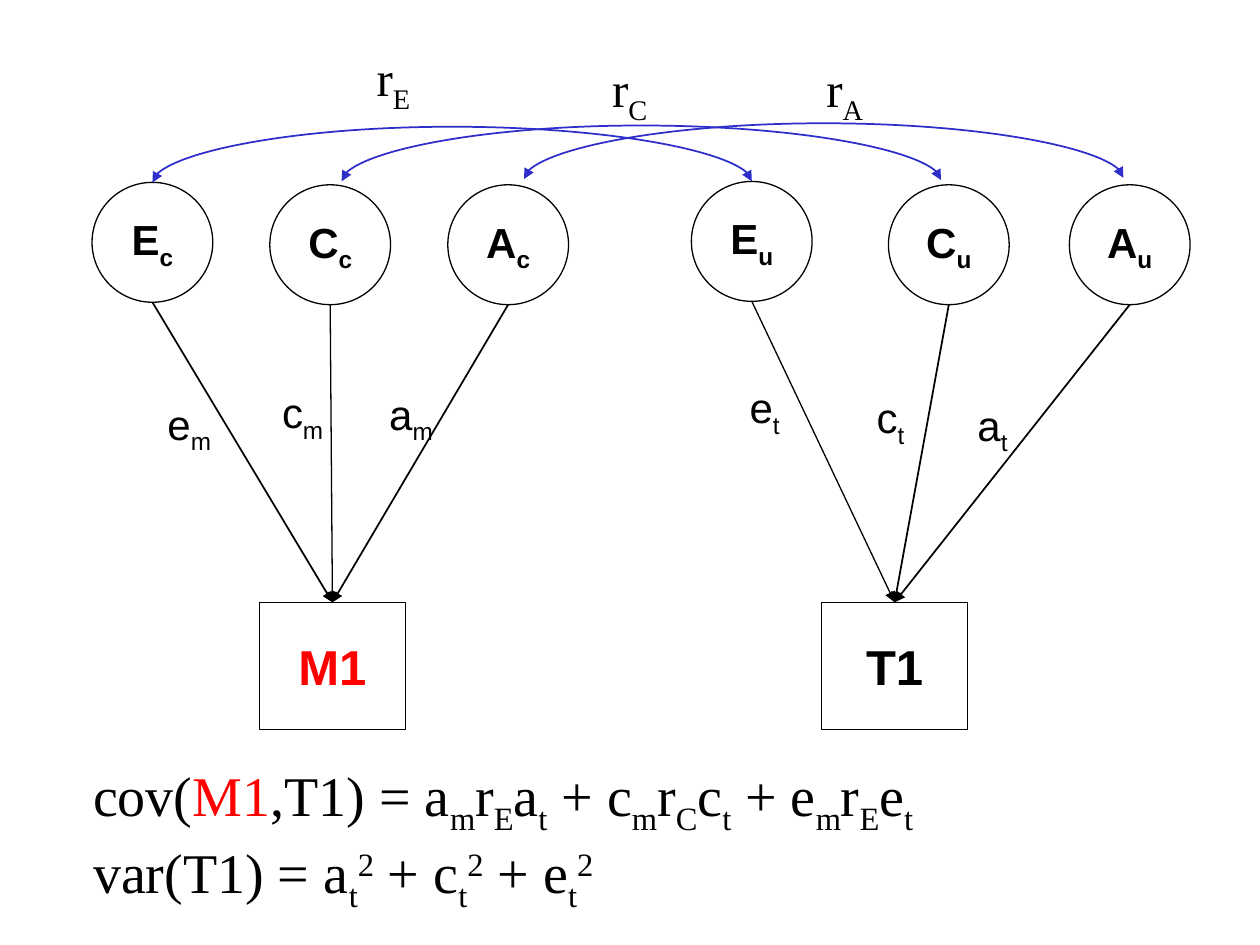
"""Build a path diagram of two traits with correlated E, C and A factors."""
from typing import NamedTuple

from lxml.etree import SubElement
from pptx import Presentation
from pptx.dml.color import RGBColor
from pptx.enum.shapes import MSO_CONNECTOR, MSO_SHAPE
from pptx.enum.text import MSO_ANCHOR, PP_ALIGN
from pptx.oxml.ns import qn
from pptx.util import Pt

BLACK = RGBColor(0, 0, 0)
WHITE = RGBColor(255, 255, 255)
RED = RGBColor(255, 0, 0)
BLUE = RGBColor(0x2E, 0x2E, 0xCB)
SANS, SERIF = "Arial", "Times New Roman"
BASE = {"_": "-25000", "^": "30000"}
NODE_W, NODE_H = 69, 68.5
BOX_W, BOX_H, BOX_TOP = 83.5, 72.7, 344.2
ARC_SPAN, ARC_RISE, ARC_DROP = 342.5, 32.4, 0.72


class Trait(NamedTuple):
    text: str
    mid: float


class Node(NamedTuple):
    text: str
    mid: float
    top: float
    trait: Trait
    weight: float


class Label(NamedTuple):
    text: str
    left: float
    top: float
    width: float
    height: float
    size: float
    font: str


class Arc(NamedTuple):
    left: float
    mid: float


M1, T1 = Trait("!M1", 190), Trait("T1", 511.2)
TRAITS = [M1, T1]
NODES = [
    Node("E|_c", 87.1, 104.2, M1, 1),
    Node("C|_c", 188.7, 105.6, M1, 0.75),
    Node("A|_c", 290.4, 105.6, M1, 1),
    Node("E|_u", 429.6, 103.7, T1, 0.75),
    Node("C|_u", 542.2, 105.6, T1, 1),
    Node("A|_u", 645.6, 105.6, T1, 1),
]
ARCS = [Arc(87.1, 104), Arc(195.2, 103.3), Arc(299.4, 102)]
LABELS = [
    Label("e|_m", 88.6, 223.9, 41.8, 36, 24, SANS),
    Label("c|_m", 154.1, 217.4, 40.3, 36, 24, SANS),
    Label("a|_m", 215.3, 218.2, 41.8, 36, 24, SANS),
    Label("e|_t", 421.2, 214.6, 39.6, 36, 24, SANS),
    Label("c|_t", 493.9, 220.3, 31, 36, 24, SANS),
    Label("a|_t", 551.5, 224.6, 50.4, 36, 24, SANS),
    Label("r|_E", 208.1, 23.8, 35.3, 41, 28, SERIF),
    Label("r|_C", 342.7, 30.2, 52.6, 41, 28, SERIF),
    Label("r|_A", 465.1, 30.2, 37.4, 41, 28, SERIF),
    Label("cov(|!M1|,T1) = a|_m|r|_E|a|_t| + c|_m|r|_C|c|_t| + e|_m|r|_E|e|_t\n"
          "var(T1) = a|_t|^2| + c|_t|^2| + e|_t|^2",
          46.1, 431.3, 501.8, 85, 32, SERIF),
]


def write(frame, text: str, size: float, font: str, bold=False, align=PP_ALIGN.LEFT) -> None:
    """Fill a frame; a part led by _ is low, by ^ high, by ! red."""
    frame.word_wrap = False
    for i, line in enumerate(text.split("\n")):
        para = frame.add_paragraph() if i else frame.paragraphs[0]
        para.alignment = align
        para.font.size, para.font.name, para.font.bold = Pt(size), font, bold
        for part in line.split("|"):
            run = para.add_run()
            run.text = part.lstrip("_^!")
            run.font.color.rgb = RED if part[0] == "!" else BLACK
            if part[0] in BASE:
                run.font._element.set("baseline", BASE[part[0]])


def draw_shape(slide, kind, mid: float, top: float, width: float, height: float,
               text: str, size: float) -> None:
    """Draw an outlined shape around its middle with a bold name."""
    shape = slide.shapes.add_shape(kind, Pt(mid - width / 2), Pt(top), Pt(width), Pt(height))
    shape.shadow.inherit = False
    shape.fill.solid()
    shape.fill.fore_color.rgb = WHITE
    shape.line.color.rgb = BLACK
    shape.line.width = Pt(0.75)
    shape.text_frame.vertical_anchor = MSO_ANCHOR.MIDDLE
    write(shape.text_frame, text, size, SANS, True, PP_ALIGN.CENTER)


def draw_link(slide, kind, ends: tuple, color: RGBColor, weight: float, tips: list):
    """Draw a connector with the given arrow tips."""
    link = slide.shapes.add_connector(kind, *map(Pt, ends))
    link.line.color.rgb = color
    link.line.width = Pt(weight)
    for tip in tips:
        SubElement(link.line._get_or_add_ln(), qn(f"a:{tip}"), type="triangle")
    SubElement(link._element.spPr, qn("a:effectLst"))
    return link


def draw_arc(slide, arc: Arc) -> None:
    """Draw a two-headed curve that rises over its ends."""
    mid = arc.left + ARC_SPAN / 2
    dx, dy = ARC_DROP / 2, ARC_SPAN / 2
    ends = (mid + dx, arc.mid + dy, mid - dx, arc.mid - dy)
    link = draw_link(slide, MSO_CONNECTOR.CURVE, ends, BLUE, 1, ["headEnd", "tailEnd"])
    props = link._element.spPr
    props.find(qn("a:xfrm")).set("rot", "5400000")
    guides = props.find(qn("a:prstGeom")).find(qn("a:avLst"))
    bend = round(ARC_RISE / ARC_DROP * 100000)
    SubElement(guides, qn("a:gd"), name="adj1", fmla=f"val {bend}")


def draw_label(slide, label: Label) -> None:
    """Place a text box."""
    box = slide.shapes.add_textbox(*map(Pt, label[1:5]))
    write(box.text_frame, label.text, label.size, label.font)


def main() -> None:
    """Build and save the slide."""
    deck = Presentation()
    deck.slide_width, deck.slide_height = Pt(720), Pt(540)
    slide = deck.slides.add_slide(deck.slide_layouts[6])
    for trait in TRAITS:
        draw_shape(slide, MSO_SHAPE.RECTANGLE, trait.mid, BOX_TOP, BOX_W, BOX_H, trait.text, 28)
    for node in NODES:
        draw_shape(slide, MSO_SHAPE.OVAL, node.mid, node.top, NODE_W, NODE_H, node.text, 24)
        ends = (node.mid, node.top + NODE_H, node.trait.mid, BOX_TOP)
        draw_link(slide, MSO_CONNECTOR.STRAIGHT, ends, BLACK, node.weight, ["tailEnd"])
    for arc in ARCS:
        draw_arc(slide, arc)
    for label in LABELS:
        draw_label(slide, label)
    deck.save("out.pptx")


if __name__ == "__main__":
    main()
